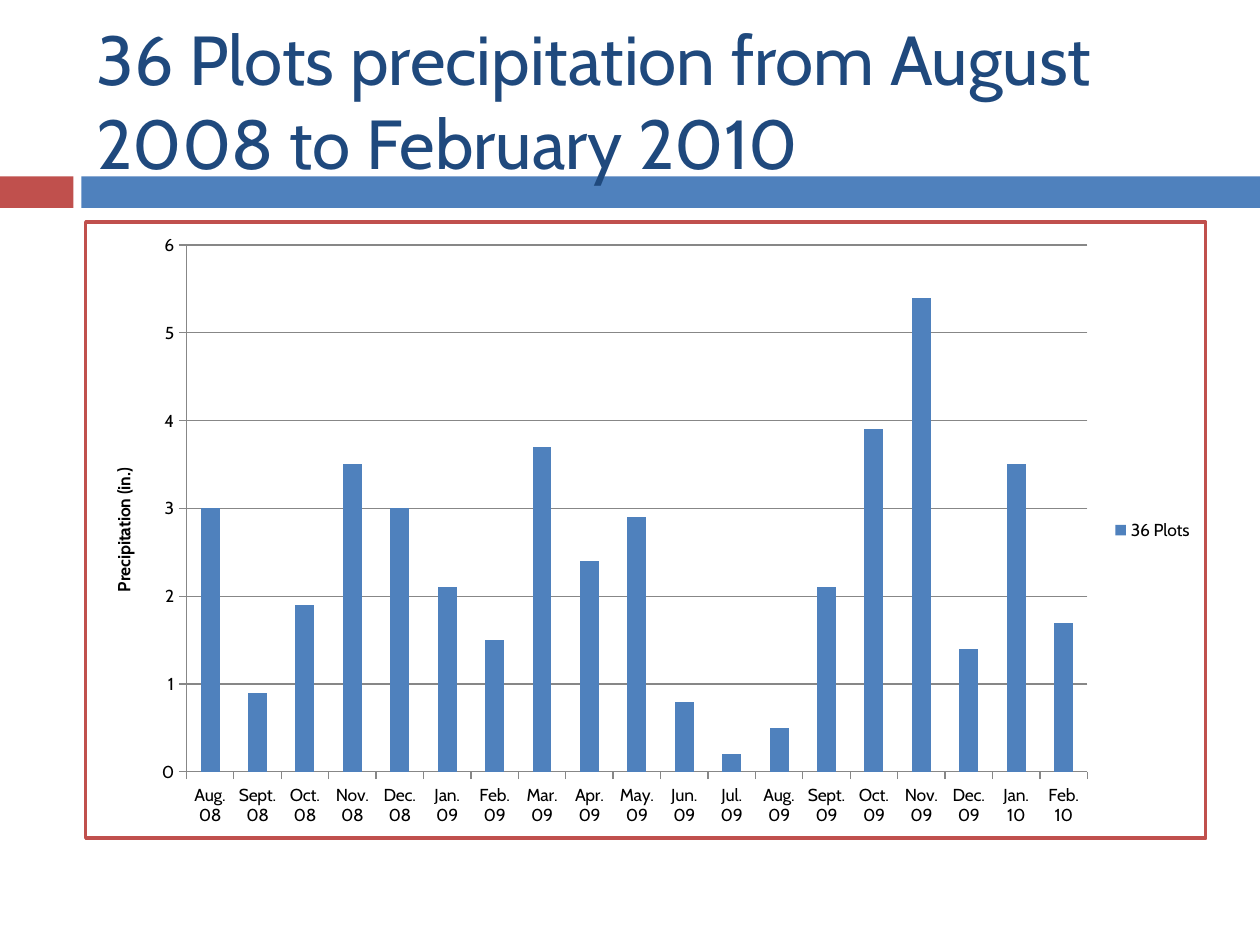
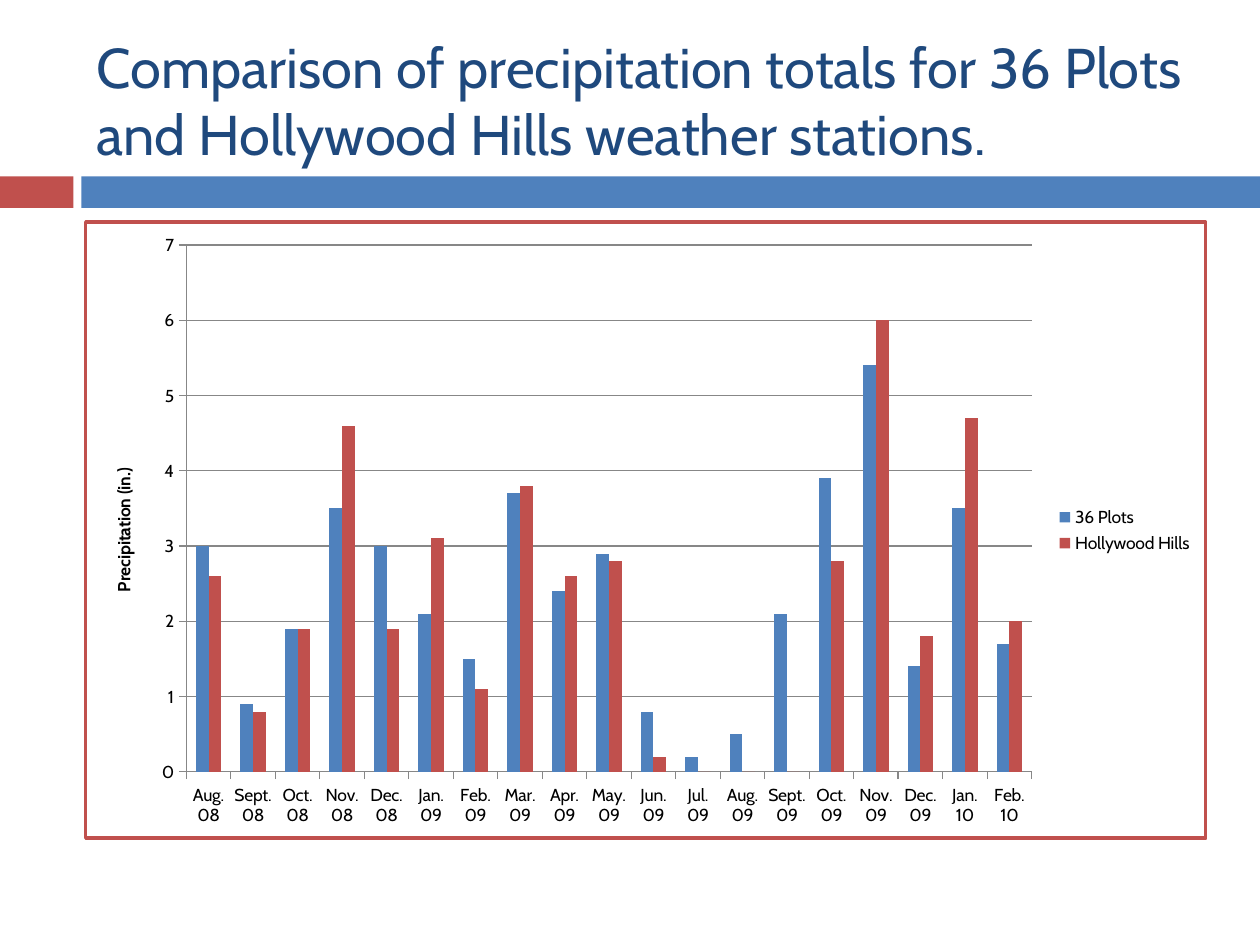
from lxml import etree
from pptx import Presentation
from pptx.chart.data import CategoryChartData
from pptx.dml.color import RGBColor
from pptx.enum.chart import XL_CHART_TYPE as ChartType
from pptx.enum.chart import XL_LEGEND_POSITION as LegendPosition
from pptx.enum.chart import XL_TICK_MARK as TickMark
from pptx.enum.shapes import MSO_SHAPE as Shape
from pptx.enum.text import MSO_ANCHOR as Anchor
from pptx.enum.text import MSO_AUTO_SIZE as AutoSize
from pptx.enum.text import PP_ALIGN as Align
from pptx.oxml import parse_xml
from pptx.oxml.ns import nsdecls
from pptx.util import Pt

FONT = "Cabin"
NAVY, BLUE, RED, GRAY = "1F497D", "4F81BD", "C0504D", "878787"
BLACK, WHITE = "000000", "FFFFFF"
LEFT, WIDTH = Pt(48), Pt(642)

MONTHS = [
    "Aug. 08", "Sept. 08", "Oct. 08", "Nov. 08", "Dec. 08", "Jan. 09", "Feb. 09",
    "Mar. 09", "Apr. 09", "May. 09", "Jun. 09", "Jul. 09", "Aug. 09", "Sept. 09",
    "Oct. 09", "Nov. 09", "Dec. 09", "Jan. 10", "Feb. 10",
]
PLOTS = ("36 Plots", BLUE, [3, 0.9, 1.9, 3.5, 3, 2.1, 1.5, 3.7, 2.4, 2.9,
                            0.8, 0.2, 0.5, 2.1, 3.9, 5.4, 1.4, 3.5, 1.7])
HILLS = ("Hollywood Hills", RED, [2.6, 0.8, 1.9, 4.6, 1.9, 3.1, 1.1, 3.8, 2.6, 2.8,
                                  0.2, 0, 0, 0, 2.8, 6, 1.8, 4.7, 2])

# title, title size, chart type, overlap, axis maximum, stations
PAGES = [
    ("36 Plots precipitation from August 2008 to February 2010",
     39.6, ChartType.COLUMN_STACKED, 100, 6, [PLOTS]),
    ("Comparison of precipitation totals for 36 Plots and Hollywood Hills weather stations.",
     32, ChartType.COLUMN_CLUSTERED, 0, 7, [PLOTS, HILLS]),
]


def rgb(value):
    return RGBColor.from_string(value)


def format_text(font, size, color=BLACK, bold=False):
    font.name = FONT
    font.size = Pt(size)
    font.bold = bold
    font.color.rgb = rgb(color)


deck = Presentation()
deck.slide_width, deck.slide_height = Pt(720), Pt(540)
layout = deck.slide_layouts.get_by_name("Title Only")

for number, (heading, size, chart_type, overlap, maximum, stations) in enumerate(PAGES):
    page = deck.slides.add_slide(layout)

    # The bands belong to the layout, so both pages show them behind the title.
    if number == 0:
        for position, (left, width, color) in enumerate([(0, 42, RED), (46.5, 673.5, BLUE)]):
            band = page.shapes.add_shape(Shape.RECTANGLE, Pt(left), Pt(100.8), Pt(width), Pt(18))
            band.shadow.inherit = False
            band.fill.solid()
            band.fill.fore_color.rgb = rgb(color)
            band.line.fill.background()
            layout.shapes.element.insert(2 + position, band.element)

    title = page.shapes.title
    title.left, title.top, title.width, title.height = LEFT, Pt(18), WIDTH, Pt(78)
    frame = title.text_frame
    frame.text = heading
    frame.word_wrap = True
    frame.auto_size = AutoSize.NONE
    frame.vertical_anchor = Anchor.MIDDLE
    para = frame.paragraphs[0]
    para.alignment = Align.LEFT
    format_text(para.runs[0].font, size, NAVY)

    data = CategoryChartData()
    data.categories = MONTHS
    for name, color, inches in stations:
        data.add_series(name, inches)
    chart = page.shapes.add_chart(chart_type, LEFT, Pt(126), WIDTH, Pt(354), data).chart
    chart.has_title = False
    format_text(chart.font, 10)
    chart.has_legend = True
    chart.legend.position = LegendPosition.RIGHT
    chart.legend.include_in_layout = False

    plot = chart.plots[0]
    plot.gap_width, plot.overlap = 150, overlap
    plot.vary_by_categories = False
    for series, (name, color, inches) in zip(plot.series, stations):
        series.format.fill.solid()
        series.format.fill.fore_color.rgb = rgb(color)

    months_axis, rain_axis = chart.category_axis, chart.value_axis
    rain_axis.minimum_scale, rain_axis.maximum_scale, rain_axis.major_unit = 0, maximum, 1
    rain_axis.has_major_gridlines = True
    rain_axis.axis_title.text_frame.text = "Precipitation (in.)"
    axis_span = rain_axis.axis_title.text_frame.paragraphs[0].runs[0]
    format_text(axis_span.font, 10, bold=True)
    for axis in (months_axis, rain_axis):
        axis.major_tick_mark = TickMark.OUTSIDE
        axis.minor_tick_mark = TickMark.NONE
    for part in (months_axis, rain_axis, rain_axis.major_gridlines):
        part.format.line.color.rgb = rgb(GRAY)
        part.format.line.width = Pt(0.75)

    # The frame around a chart must precede its text properties.
    chart_frame = parse_xml(
        f'<c:spPr {nsdecls("c", "a")}>'
        f'<a:solidFill><a:srgbClr val="{WHITE}"/></a:solidFill>'
        f'<a:ln w="{Pt(2)}"><a:solidFill><a:srgbClr val="{RED}"/></a:solidFill>'
        '<a:round/></a:ln></c:spPr>'
    )
    chart.element.find(etree.QName(chart_frame.nsmap["c"], "txPr")).addprevious(chart_frame)

deck.save("out.pptx")
